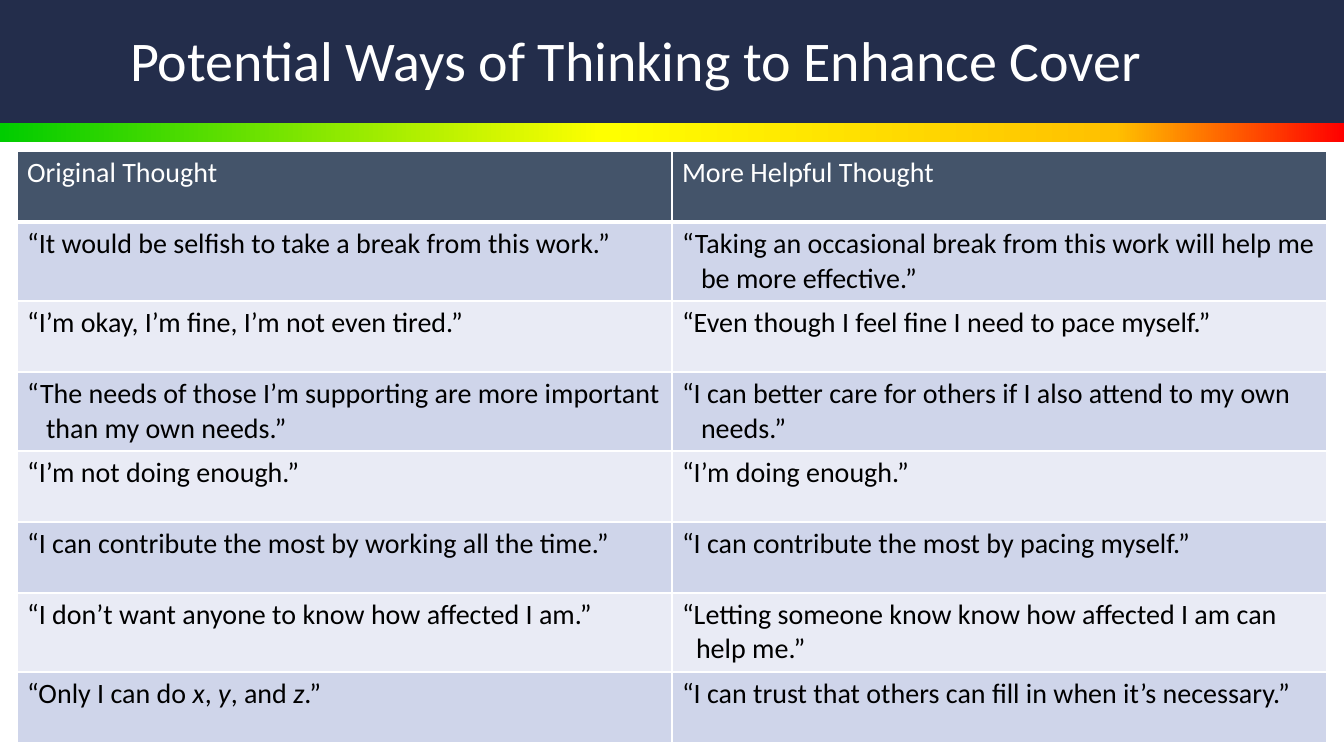
from pptx import Presentation
from pptx.dml.color import RGBColor
from pptx.enum.shapes import MSO_SHAPE
from pptx.enum.text import MSO_ANCHOR, PP_ALIGN
from pptx.oxml import parse_xml
from pptx.oxml.ns import nsdecls
from pptx.util import Emu, Pt

RECT = MSO_SHAPE.RECTANGLE
MIDDLE = MSO_ANCHOR.MIDDLE
CENTER = PP_ALIGN.CENTER

WHITE = RGBColor(0xFF, 0xFF, 0xFF)
BLACK = RGBColor(0x00, 0x00, 0x00)
NAVY = RGBColor(0x23, 0x2D, 0x4B)
SLATE = RGBColor(0x44, 0x54, 0x6A)
BLUE = RGBColor(0xCF, 0xD5, 0xEA)
PALE = RGBColor(0xE9, 0xEB, 0xF5)
GREEN = RGBColor(0x00, 0xCC, 0x00)
YELLOW = RGBColor(0xFF, 0xFF, 0x00)
AMBER = RGBColor(0xFF, 0xC0, 0x00)
RED = RGBColor(0xFF, 0x00, 0x00)

FONT = "Calibri"
STOPS = [(0, GREEN), (45, YELLOW), (83, AMBER), (100, RED)]

# Asterisks enclose italic words; the indent of each cell is in px.
ROWS = [
    (71, ("Original Thought", 0), ("More Helpful Thought", 0)),
    (79, ("“It would be selfish to take a break from this work.”", 38),
     ("“Taking an occasional break from this work will help me be more effective.”", 19)),
    (71, ("“I’m okay, I’m fine, I’m not even tired.”", 0),
     ("“Even though I feel fine I need to pace myself.”", 0)),
    (79, ("“The needs of those I’m supporting are more important than my own needs.”", 19),
     ("“I can better care for others if I also attend to my own needs.”", 19)),
    (71, ("“I’m not doing enough.”", 0), ("“I’m doing enough.”", 0)),
    (71, ("“I can contribute the most by working all the time.”", 0),
     ("“I can contribute the most by pacing myself.”", 0)),
    (79, ("“I don’t want anyone to know how affected I am.”", 0),
     ("“Letting someone know know how affected I am can help me.”", 14)),
    (71, ("“Only I can do *x*, *y*, and *z*.”", 0),
     ("“I can trust that others can fill in when it’s necessary.”", 0)),
]


def px(n):
    return Emu(round(n * 914400 / 100.8))


def add_run(para, text, size, color):
    run = para.add_run()
    run.text = text
    run.font.name = FONT
    run.font.size = Pt(size)
    run.font.color.rgb = color
    return run


prs = Presentation()
prs.slide_width, prs.slide_height = px(1344), px(756)
slide = prs.slides.add_slide(prs.slide_layouts[5])
shapes = slide.shapes
title = shapes.title

# Header band and colour strip
strip = shapes.add_shape(RECT, 0, px(123), px(1344), px(19))
band = shapes.add_shape(RECT, 0, 0, px(1344), px(123))
for bar in (strip, band):
    bar.shadow.inherit = False
    bar.line.fill.background()
band.fill.solid()
band.fill.fore_color.rgb = NAVY
strip.fill.gradient()
strip.fill.gradient_angle = 0
stops = "".join(
    f'<a:gs pos="{pos * 1000}"><a:srgbClr val="{color}"/></a:gs>' for pos, color in STOPS)
old = strip.fill.gradient_stops
grad = strip._element.spPr.find(".//{*}gsLst")
grad.getparent().replace(
    grad, parse_xml(f'<a:gsLst {nsdecls("a")}>{stops}</a:gsLst>')) if len(old) else None

# Title, in front of the band
band._element.addnext(title._element)
title.left, title.top, title.width, title.height = px(33), px(8), px(1218), px(111)
title.text_frame.word_wrap = True
title.text_frame.vertical_anchor = MIDDLE
para = title.text_frame.paragraphs[0]
para.alignment = CENTER
para.line_spacing = 0.9
add_run(para, "Potential Ways of Thinking to Enhance Cover ", 40, WHITE)

# Table of thoughts
table = shapes.add_table(len(ROWS), 2, px(17), px(151), px(1310), px(592)).table
for col in table.columns:
    col.width = px(655)
for i, (height, *cells) in enumerate(ROWS):
    table.rows[i].height = px(height)
    fill = SLATE if i == 0 else BLUE if i % 2 else PALE
    for j, (text, indent) in enumerate(cells):
        cell = table.cell(i, j)
        props = cell._tc.get_or_add_tcPr()
        for side in "LRTB":
            width = Pt(3 if i == 0 and side == "B" else 1)
            props.append(parse_xml(
                f'<a:ln{side} {nsdecls("a")} w="{width}"><a:solidFill>'
                f'<a:srgbClr val="{WHITE}"/></a:solidFill></a:ln{side}>'))
        cell.fill.solid()
        cell.fill.fore_color.rgb = fill
        para = cell.text_frame.paragraphs[0]
        if indent:
            form = para._p.get_or_add_pPr()
            form.set("marL", str(px(indent)))
            form.set("indent", str(-px(indent)))
        for k, part in enumerate(text.split("*")):
            run = add_run(para, part, 20, BLACK if i else WHITE)
            run.font.bold = False
            run.font.italic = k % 2 == 1

prs.save("out.pptx")
